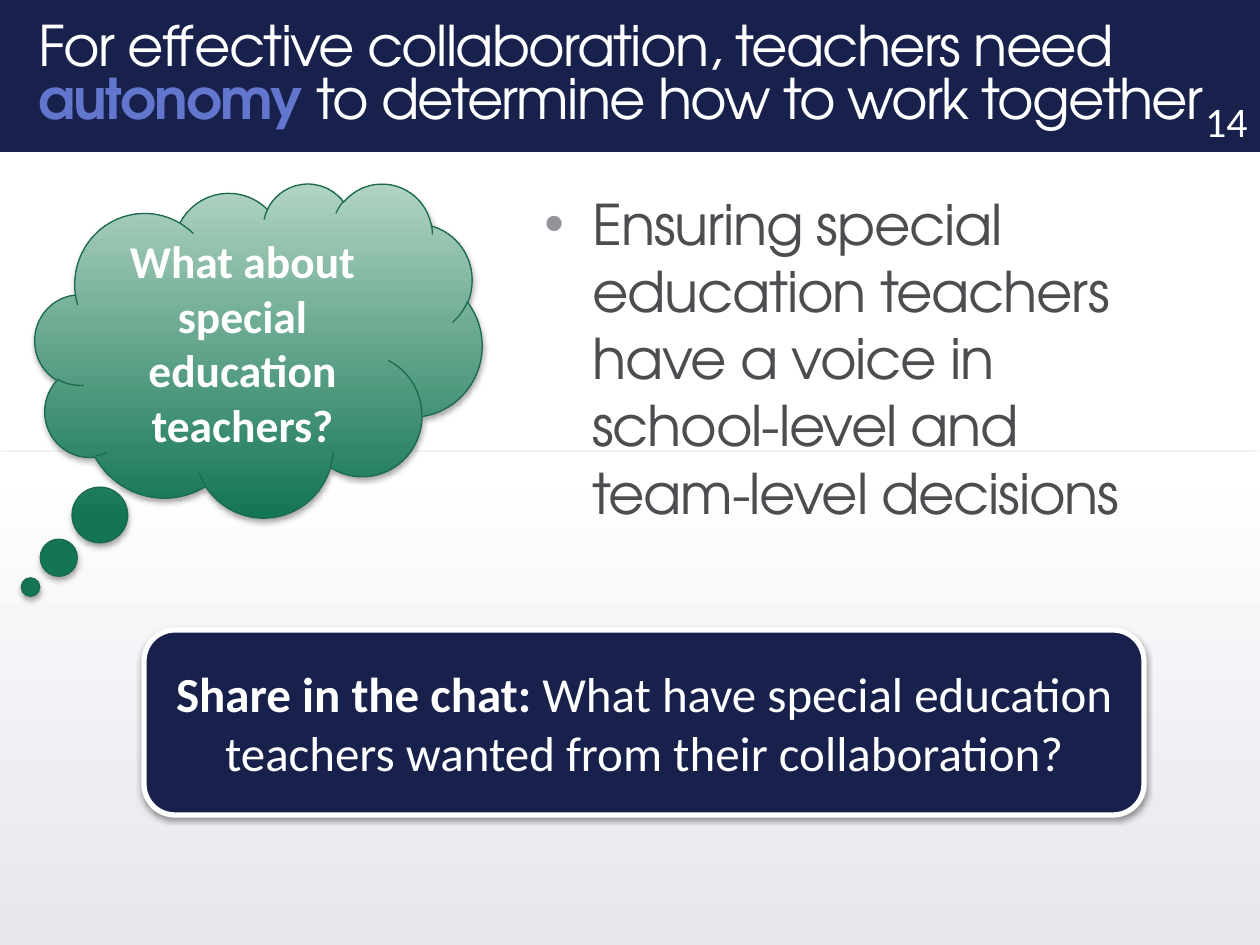
"""Build the slide on teacher autonomy and special education."""
from lxml import etree
from pptx import Presentation, util as u
from pptx.dml.color import RGBColor
from pptx.enum import shapes as s, text as t
from pptx.oxml import parse_xml
from pptx.oxml.ns import nsdecls, qn

NAVY = RGBColor(0x18, 0x21, 0x4B)
WHITE = RGBColor(0xFF, 0xFF, 0xFF)
MIST = RGBColor(0xE5, 0xE7, 0xED)
LILAC = RGBColor(0x63, 0x76, 0xCD)
GRAY = RGBColor(0x4C, 0x4D, 0x50)
GREEN = RGBColor(0x13, 0x75, 0x54)
MINT = RGBColor(0xB1, 0xD4, 0xC2)
EDGE = RGBColor(0x1B, 0x6A, 0x4F)
SANS, GEO = "Calibri", "TeX Gyre Adventor"
WIDE, HIGH = 1260, 945

TITLE = [("For effective collaboration, teachers need ", {}),
         ("autonomy ", {"color": LILAC, "bold": True}),
         ("to determine how to work together", {})]
POINT = [("Ensuring special education teachers have a voice in "
          "school-level and team-level decisions", {})]
ASK = [("What about special education teachers?", {"bold": True})]
CHAT = [("Share in the chat: ", {"bold": True}),
        ("What have special education teachers wanted "
         "from their collaboration?", {})]
PAGE = [("14", {})]

BAND = (0, 0, WIDE, 152)
FLOOR = (0, 452, WIDE, HIGH - 452)
HEAD = (26, 33, WIDE - 26, 88)
BODY = (532, 183, 665, 624)
FOOT = (966, 96, WIDE - 966, 50)
CLOUD = (35, 183, 447, 334)
CARD = (144, 630, 1000, 185)


def px(n):
    return u.Emu(round(n * 914400 / 126))


def shade(shape, alpha, dist):
    shape.shadow.inherit = False
    glow = shape._element.spPr.find(qn("a:effectLst"))
    glow.append(parse_xml(
        f'<a:outerShdw {nsdecls("a")} blurRad="{u.Pt(3.1)}" '
        f'dist="{u.Pt(dist)}" dir="5400000" rotWithShape="0">'
        f'<a:srgbClr val="000000"><a:alpha val="{alpha * 1000}"/>'
        '</a:srgbClr></a:outerShdw>'))


def draw(slide, kind, box, fill, angle=0, line=None, shadow=None):
    shape = slide.shapes.add_shape(kind, *map(px, box))
    if isinstance(fill, RGBColor):
        shape.fill.solid()
        shape.fill.fore_color.rgb = fill
    else:
        shape.fill.gradient()
        shape.fill.gradient_angle = angle
        for stop, color in zip(shape.fill.gradient_stops, fill):
            stop.color.rgb = color
    if line:
        shape.line.color.rgb, shape.line.width = line[0], u.Pt(line[1])
    else:
        shape.line.fill.background()
    if shadow:
        shade(shape, *shadow)
    else:
        shape.shadow.inherit = False
    return shape


def write(shape, runs, size, font=SANS, color=WHITE, align=t.PP_ALIGN.LEFT,
          anchor=t.MSO_ANCHOR.MIDDLE, space=None, track=0, bullet=None):
    frame = shape.text_frame
    frame.word_wrap, frame.vertical_anchor = True, anchor
    para = frame.paragraphs[0]
    para.alignment = align
    if space:
        para.line_spacing = space
    if bullet:
        props = para._p.get_or_add_pPr()
        props.set("marL", str(px(48)))
        props.set("indent", str(px(-48)))
        tint = etree.SubElement(props, qn("a:buClr"))
        etree.SubElement(tint, qn("a:srgbClr"), val=bullet)
        etree.SubElement(props, qn("a:buFont"), typeface="Arial")
        etree.SubElement(props, qn("a:buChar"), char="•")
    for words, look in runs:
        run = para.add_run()
        run.text = words
        run.font.name, run.font.size = font, u.Pt(size)
        run.font.bold = look.get("bold", False)
        run.font.color.rgb = look.get("color", color)
        if track:
            run.font._element.set("spc", str(round(track * 100)))


def main():
    deck = Presentation()
    deck.slide_width, deck.slide_height = px(WIDE), px(HIGH)
    slide = deck.slides.add_slide(deck.slide_layouts[6])
    kind, mid = s.MSO_SHAPE, t.PP_ALIGN.CENTER

    def label(box, runs, size, **look):
        write(slide.shapes.add_textbox(*map(px, box)), runs, size, **look)

    draw(slide, kind.RECTANGLE, FLOOR, (WHITE, MIST), angle=270,
         shadow=(35, 1.8))
    draw(slide, kind.RECTANGLE, BAND, NAVY)
    label(HEAD, TITLE, 32, font=GEO, space=0.8, track=-1)
    label(BODY, POINT, 32, font=GEO, color=GRAY, track=-0.7,
          anchor=t.MSO_ANCHOR.TOP, bullet="939499")
    label(FOOT, PAGE, 24, align=t.PP_ALIGN.RIGHT)

    cloud = draw(slide, kind.CLOUD_CALLOUT, CLOUD, (GREEN, MINT), angle=90,
                 line=(EDGE, 0.75), shadow=(35, 1.8))
    cloud.adjustments[0], cloud.adjustments[1] = -0.51, 0.71
    write(cloud, ASK, 26, align=mid)
    card = draw(slide, kind.ROUNDED_RECTANGLE, CARD, NAVY, line=(WHITE, 3),
                shadow=(38, 1.6))
    write(card, CHAT, 28, align=mid)
    deck.save("out.pptx")


if __name__ == "__main__":
    main()
